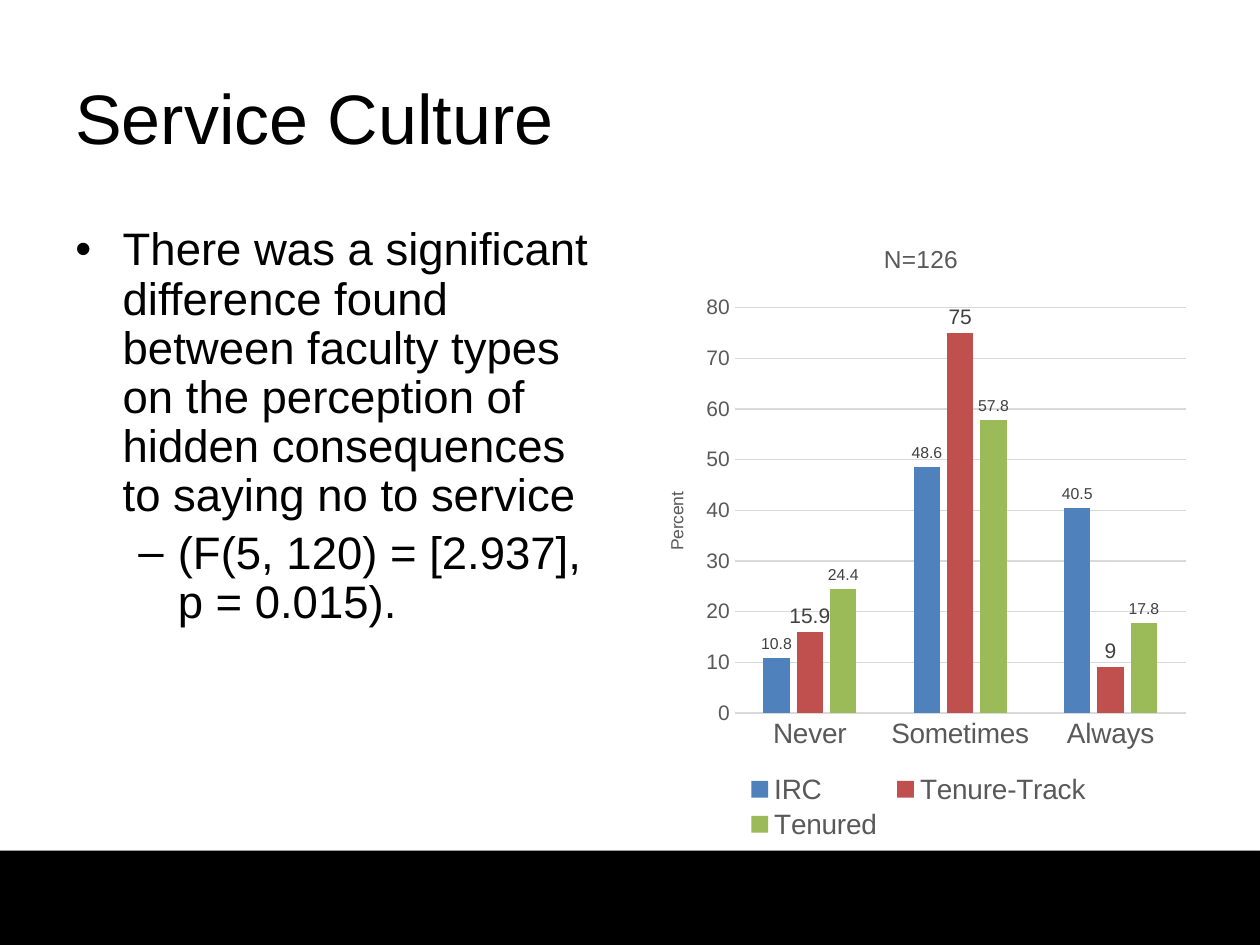
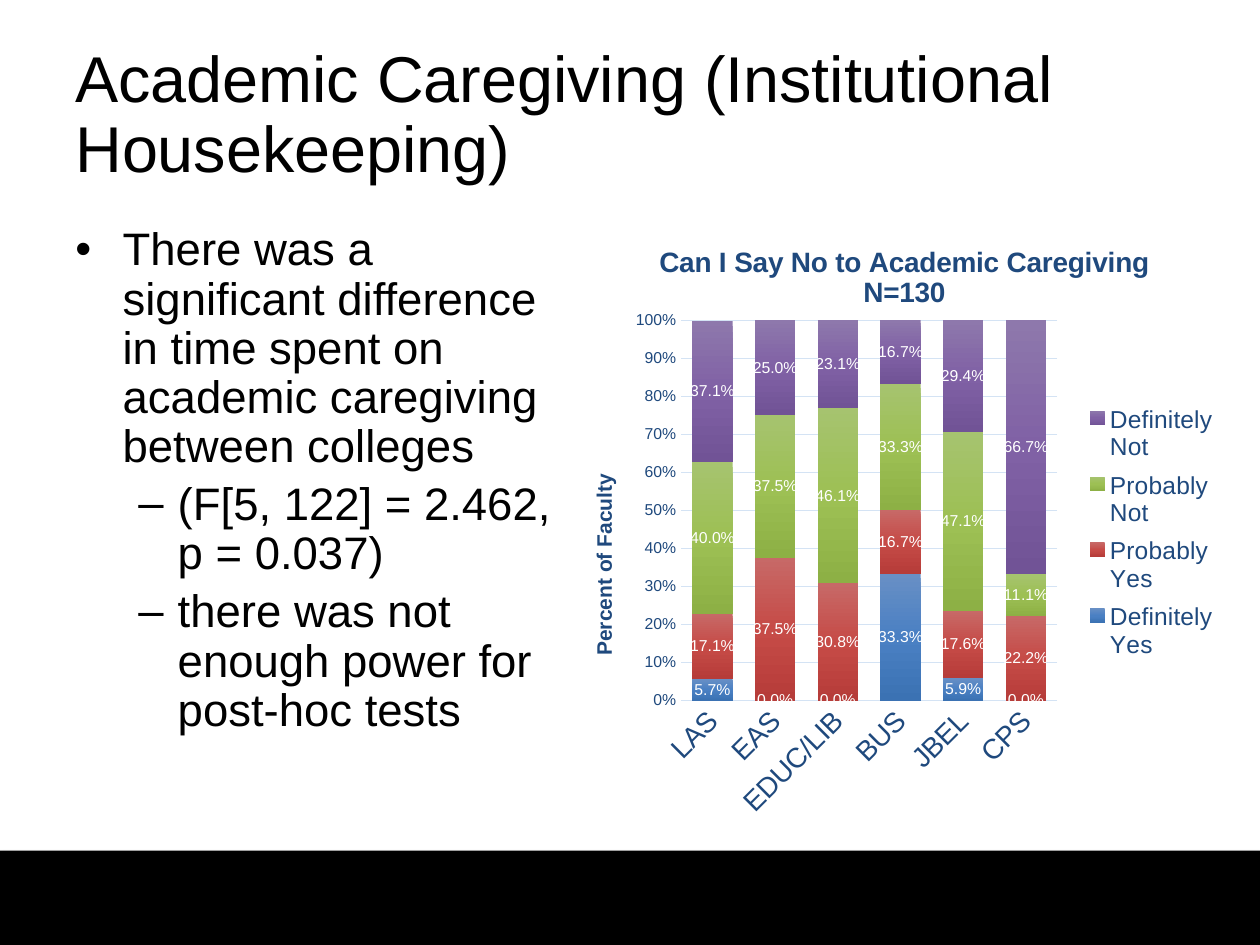
from lxml import etree
from pptx import Presentation
from pptx.chart.data import CategoryChartData
from pptx.dml.color import RGBColor
from pptx.enum import chart as ch, shapes, text
from pptx.oxml import parse_xml
from pptx.oxml.ns import nsdecls, qn
from pptx.util import Pt

FACE = "Arial"
BLACK, WHITE, GREY, DARK, NAVY = "000000", "FFFFFF", "595959", "404040", "1F497D"
BODY = 26
LEVELS = [("•", 27, -27), ("–", 58.5, -22.5)]


def tint(code):
    return RGBColor.from_string(code)


def style(font, size, color, bold=False):
    font.name, font.size, font.bold = FACE, Pt(size), bold
    font.color.rgb = tint(color)


def write(slide, lines, left, top, width, height, size, color=BLACK,
          anchor=text.MSO_ANCHOR.TOP, bullets=False, pitch=0.9):
    frame = slide.shapes.add_textbox(Pt(left), Pt(top), Pt(width), Pt(height)).text_frame
    frame.word_wrap = True
    frame.vertical_anchor = anchor
    for i, (level, line) in enumerate(lines):
        para = frame.paragraphs[0] if i == 0 else frame.add_paragraph()
        para.line_spacing = pitch
        if i:
            para.space_before = Pt(size * 0.2)
        if bullets:
            mark, margin, indent = LEVELS[level]
            para.level = level
            props = para._p.get_or_add_pPr()
            props.set("marL", str(Pt(margin)))
            props.set("indent", str(Pt(indent)))
            etree.SubElement(props, qn("a:buFont")).set("typeface", FACE)
            etree.SubElement(props, qn("a:buChar")).set("char", mark)
        run = para.add_run()
        run.text = line
        style(run.font, size, color)


def band(slide):
    bar = slide.shapes.add_shape(shapes.MSO_SHAPE.RECTANGLE, 0, Pt(486), Pt(720), Pt(54))
    bar.fill.solid()
    bar.fill.fore_color.rgb = tint(BLACK)
    bar.line.fill.background()
    bar.shadow.inherit = False
    bar._element.spPr.find(qn("a:effectLst")).append(parse_xml(
        f'<a:outerShdw {nsdecls("a")} blurRad="{Pt(3.1)}" dist="{Pt(1.8)}" dir="5400000">'
        f'<a:srgbClr val="{BLACK}"><a:alpha val="35000"/></a:srgbClr></a:outerShdw>'))


def base(deck, title, size, pitch, lines, width):
    slide = deck.slides.add_slide(deck.slide_layouts[6])
    band(slide)
    write(slide, [(0, title)], 36, 21.6, 648, 90, size,
          anchor=text.MSO_ANCHOR.MIDDLE, pitch=pitch)
    write(slide, lines, 36, 126, width, 356.4, BODY, bullets=True)
    return slide


def place(node, left, top, width=None, height=None, inner=False):
    for old in node.findall(qn("c:layout")):
        node.remove(old)
    target = '<c:layoutTarget val="inner"/>' if inner else ""
    sizes = [("w", width), ("h", height)] if width else []
    parts = "".join(f'<c:{key} val="{val}"/>' for key, val in [("x", left), ("y", top)] + sizes)
    layout = parse_xml(
        f'<c:layout {nsdecls("c")}><c:manualLayout>{target}<c:xMode val="edge"/>'
        f'<c:yMode val="edge"/>{parts}</c:manualLayout></c:layout>')
    over = node.find(qn("c:overlay"))
    if over is None:
        node.insert(0, layout)
    else:
        over.addprevious(layout)


def label(title, words, spot, size, color, bold):
    run = title.text_frame.paragraphs[0].add_run()
    run.text = words
    style(run.font, size, color, bold)
    place(title._title, *spot)


def blend(series, stops):
    marks = "".join(f'<a:gs pos="{pos}"><a:srgbClr val="{code}"/></a:gs>'
                    for pos, code in zip((0, 50000, 100000), stops))
    props = series._element.get_or_add_spPr()
    props.insert(0, parse_xml(
        f'<a:gradFill {nsdecls("a")} rotWithShape="1"><a:gsLst>{marks}</a:gsLst>'
        f'<a:lin ang="5400000" scaled="0"/></a:gradFill>'))


def paint(series, fill):
    series.invert_if_negative = False
    if isinstance(fill, str):
        series.format.fill.solid()
        series.format.fill.fore_color.rgb = tint(fill)
    else:
        blend(series, fill)


def tags(series, size, color, pos, form):
    labels = series.data_labels
    labels.show_value = True
    labels.position = pos
    labels.number_format, labels.number_format_is_linked = form, False
    style(labels.font, size, color)


def rule(line, color):
    line.color.rgb = tint(color)
    line.width = Pt(0.75)


def axes(chart, color, grid, size, top, step, form):
    cat, val = chart.category_axis, chart.value_axis
    for axis, points in ((cat, 16), (val, size)):
        axis.major_tick_mark = axis.minor_tick_mark = ch.XL_TICK_MARK.NONE
        style(axis.tick_labels.font, points, color)
    rule(cat.format.line, grid)
    rule(val.major_gridlines.format.line, grid)
    val.format.line.fill.background()
    val.minimum_scale, val.maximum_scale, val.major_unit = 0, top, step
    val.tick_labels.number_format = form
    val.tick_labels.number_format_is_linked = False


def key(chart, pos, spot, size, color):
    chart.has_legend = True
    chart.legend.position = pos
    chart.legend.include_in_layout = False
    style(chart.legend.font, size, color)
    place(chart.legend._element, *spot)


def graph(slide, kind, cats, rows, left, width, plot, gap, lap):
    data = CategoryChartData()
    data.categories = cats
    for name, vals in rows:
        data.add_series(name, vals)
    chart = slide.shapes.add_chart(kind, Pt(left), Pt(126), Pt(width), Pt(356.4), data).chart
    style(chart.font, 10, BLACK)
    bars = chart.plots[0]
    bars.gap_width, bars.overlap, bars.vary_by_categories = gap, lap, False
    place(chart._chartSpace.chart.plotArea, *plot, inner=True)
    return chart


def heads(chart, title, spot, size, side, side_spot, side_size, color, bold=False):
    chart.has_title = True
    label(chart.chart_title, title, spot, size, color, bold)
    name = chart.value_axis.axis_title
    label(name, side, side_spot, side_size, color, bold)
    name.text_frame._txBody.bodyPr.set("rot", "-5400000")
    name.text_frame._txBody.bodyPr.set("vert", "horz")


def culture(deck):
    slide = base(deck, "Service Culture", 40, 1, [
        (0, "There was a significant difference found between faculty types on the "
            "perception of hidden consequences to saying no to service"),
        (1, "(F(5, 120) = [2.937], p = 0.015).")], 318.24)
    rows = [("IRC", (10.8, 48.6, 40.5)), ("Tenure-Track", (15.9, 75, 9)),
            ("Tenured", (24.4, 57.8, 17.8))]
    chart = graph(slide, ch.XL_CHART_TYPE.COLUMN_CLUSTERED,
                  ("Never", "Sometimes", "Always"), rows,
                  365.76, 318.24, (0.17, 0.14, 0.81, 0.65), 219, -27)
    axes(chart, GREY, "D9D9D9", 12, 80, 10, "General")
    heads(chart, "N=126", (0.43, 0.03), 14, "Percent", (0.04, 0.43), 10, GREY)
    key(chart, ch.XL_LEGEND_POSITION.BOTTOM, (0.18, 0.88, 0.64, 0.12), 16, GREY)
    looks = [("4F81BD", 9), ("C0504D", 12), ("9BBB59", 9)]
    for series, (fill, size) in zip(chart.plots[0].series, looks):
        paint(series, fill)
        tags(series, size, DARK, ch.XL_LABEL_POSITION.OUTSIDE_END, "General")


def caring(deck):
    slide = base(deck, "Academic Caregiving (Institutional Housekeeping)", 37, 0.9, [
        (0, "There was a significant difference in time spent on academic caregiving "
            "between colleges"),
        (1, "(F[5, 122] = 2.462, p = 0.037)"),
        (1, "there was not enough power for post-hoc tests")], 300.24)
    rows = [("Definitely Yes", (0.057, 0, 0, 0.333, 0.059, 0)),
            ("Probably Yes", (0.171, 0.375, 0.308, 0.167, 0.176, 0.222)),
            ("Probably Not", (0.4, 0.375, 0.461, 0.333, 0.471, 0.111)),
            ("Definitely Not", (0.371, 0.25, 0.231, 0.167, 0.294, 0.667))]
    chart = graph(slide, ch.XL_CHART_TYPE.COLUMN_STACKED,
                  ("LAS", "EAS", "EDUC/LIB", "BUS", "JBEL", "CPS"), rows,
                  324, 383.76, (0.17, 0.16, 0.56, 0.61), 55, 100)
    axes(chart, NAVY, "D4E3F4", 9, 1, 0.1, "0%")
    chart.category_axis._element.get_or_add_txPr().bodyPr.set("rot", "-2700000")
    heads(chart, "Can I Say No to Academic Caregiving N=130", (0.13, 0.03), 16,
          "Percent of Faculty", (0.03, 0.4), 12, NAVY, bold=True)
    key(chart, ch.XL_LEGEND_POSITION.RIGHT, (0.75, 0.28, 0.24, 0.44), 14, NAVY)
    fills = [("688FC5", "4A80C3", "3B72B3"), ("C76967", "C64B47", "B63C39"),
             ("A6C36F", "9DC054", "8DB045"), ("8E78AC", "8061A5", "715396")]
    for series, fill in zip(chart.plots[0].series, fills):
        paint(series, fill)
        tags(series, 9, WHITE, ch.XL_LABEL_POSITION.CENTER, "0.0%")


def main():
    deck = Presentation()
    deck.slide_width, deck.slide_height = Pt(720), Pt(540)
    culture(deck)
    caring(deck)
    deck.save("out.pptx")


if __name__ == "__main__":
    main()
